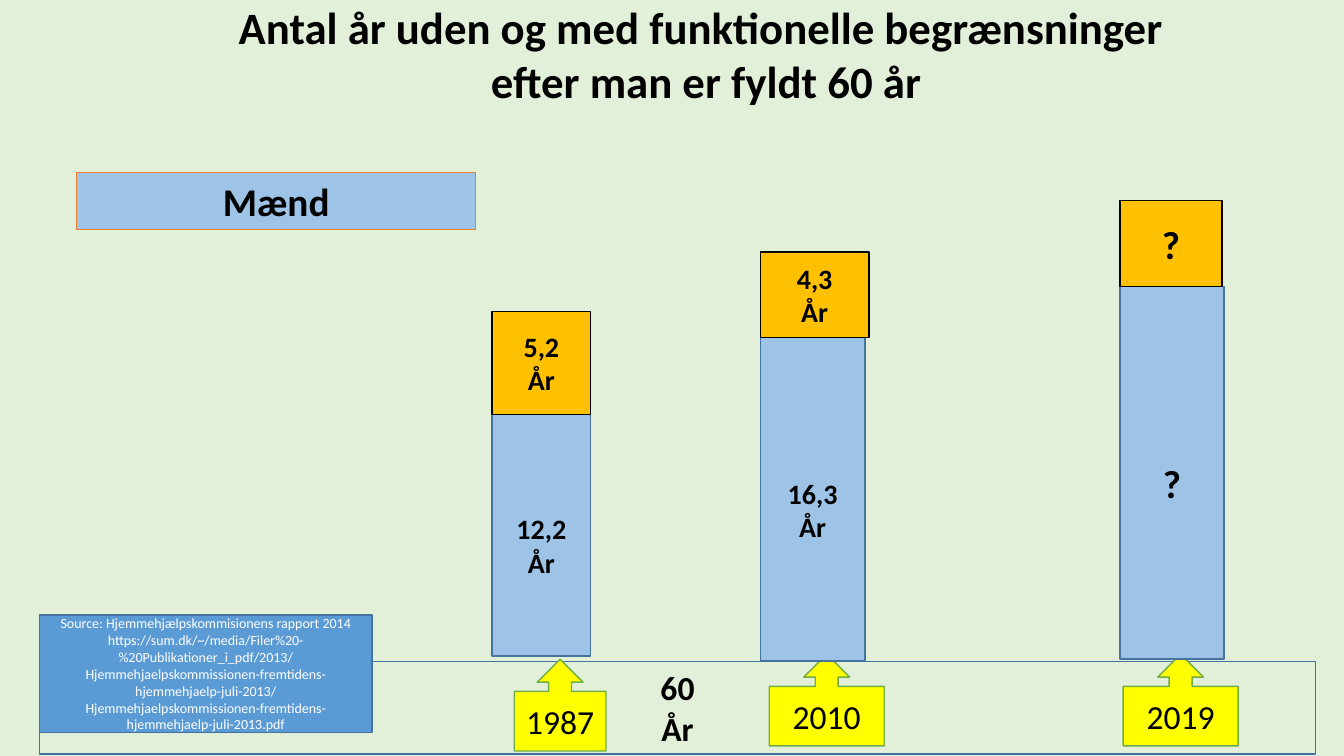
from pptx import Presentation
from pptx.dml.color import RGBColor
from pptx.enum.shapes import MSO_SHAPE
from pptx.enum.text import MSO_ANCHOR, MSO_AUTO_SIZE, PP_ALIGN
from pptx.util import Inches, Pt

TITLE = ["Antal år uden og med funktionelle begrænsninger ",
         "efter man er fyldt 60 år"]
GROUP = "Mænd"
AXIS = ["60", "År"]
SOURCE = [
    "Source: Hjemmehjælpskommisionens rapport 2014",
    "https://sum.dk/~/media/Filer%20-%20Publikationer_i_pdf/2013/"
    "Hjemmehjaelpskommissionen-fremtidens-hjemmehjaelp-juli-2013/"
    "Hjemmehjaelpskommissionen-fremtidens-hjemmehjaelp-juli-2013.pdf",
]
# left, cap top, joint, foot, bar width, cap width, bar text, cap text, size
BARS = [
    (4.88, 3.09, 4.11, 6.51, 0.98, 0.98, ["12,2", "År"], ["5,2", "År"], 20),
    (7.54, 2.5, 3.35, 6.56, 1.04, 1.08, ["16,3", "År"], ["4,3", "År"], 20),
    (11.11, 1.99, 2.84, 6.54, 1.03, 1.01, ["?"], ["?"], 28),
]
# year, left, top, width
YEARS = [("1987", 5.1, 6.54, 0.91), ("2010", 7.63, 6.49, 1.14),
         ("2019", 11.14, 6.49, 1.14)]

GREEN, BLUE, EDGE = "E2F0D9", "9DC3E6", "43739E"
BLACK, WHITE, AMBER = "000000", "FFFFFF", "FFC000"
DROP = 0.2  # pushes the bar labels a little below the middle


def color(code):
    return RGBColor.from_string(code)


def write(frame, lines, size, ink=BLACK, bold=True):
    frame.word_wrap = True
    frame.auto_size = MSO_AUTO_SIZE.NONE
    frame.vertical_anchor = MSO_ANCHOR.MIDDLE
    for i, line in enumerate(lines):
        para = frame.add_paragraph() if i else frame.paragraphs[0]
        para.alignment = PP_ALIGN.CENTER
        run = para.add_run()
        run.text = line
        font = run.font
        font.name, font.size, font.bold = "Calibri", Pt(size), bold
        font.color.rgb = color(ink)


def box(at, fill, edge, lines, size, ink=BLACK, bold=True,
        kind=MSO_SHAPE.RECTANGLE, width=1):
    shape = slide.shapes.add_shape(kind, *map(Inches, at))
    shape.shadow.inherit = False
    shape.fill.solid()
    shape.fill.fore_color.rgb = color(fill)
    shape.line.color.rgb = color(edge)
    shape.line.width = Pt(width)
    write(shape.text_frame, lines, size, ink, bold)
    return shape


deck = Presentation()
deck.slide_width, deck.slide_height = Inches(13.33), Inches(7.5)
slide = deck.slides.add_slide(deck.slide_layouts[5])
slide.background.fill.solid()
slide.background.fill.fore_color.rgb = color(GREEN)

title = slide.shapes.title
title.left, title.top = Inches(1.74), Inches(0.15)
title.width, title.height = Inches(10.53), Inches(0.77)
write(title.text_frame, TITLE, 32)

box((0.39, 6.56, 12.66, 0.92), GREEN, EDGE, AXIS, 24)
for year, left, top, wide in YEARS:
    box((left, top, wide, 0.91), "FFFF00", "70AD47", [year], 24,
        bold=False, kind=MSO_SHAPE.UP_ARROW_CALLOUT)

for left, top, joint, foot, wide, cap, free, limited, size in BARS:
    bar = box((left, joint, wide, foot - joint), BLUE, EDGE, free, size)
    bar.text_frame.margin_top = Inches(0.05 + DROP)
    box((left, top, cap, joint - top), AMBER, BLACK, limited, size)

box((0.76, 1.71, 3.96, 0.57), BLUE, "ED7D31", [GROUP], 28, width=0.5)
box((0.39, 6.1, 3.3, 1.17), "5B9BD5", EDGE, SOURCE, 10, WHITE, False)

deck.save("out.pptx")
